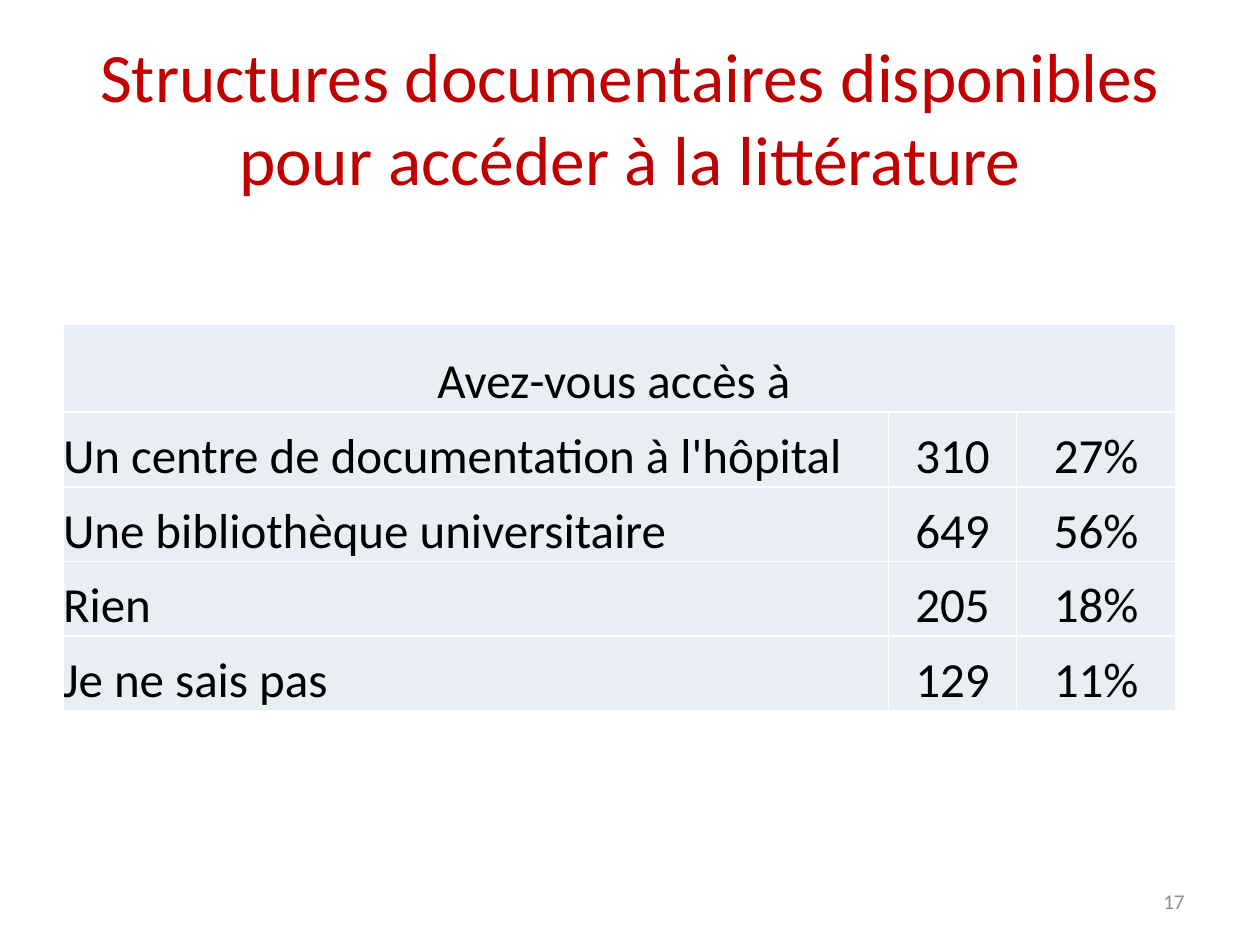
import pptx
import pptx.dml.color
import pptx.enum.text
import pptx.oxml
import pptx.oxml.ns
import pptx.util
from pptx.util import Cm

COLORS = {"title": "C00000", "text": "000000", "cell": "E9EDF4", "border": "FFFFFF", "number": "8C8C8C"}
ALIGN = pptx.enum.text.PP_ALIGN
ANCHOR = pptx.enum.text.MSO_ANCHOR
QUESTION = "Avez-vous accès à "
ANSWERS = [
    ("Un centre de documentation à l'hôpital", "310", "27%"),
    ("Une bibliothèque universitaire", "649", "56%"),
    ("Rien", "205", "18%"),
    ("Je ne sais pas", "129", "11%"),
]


def write(frame, wording, size, color, align):
    """Write one formatted run into the first paragraph of a text frame."""
    paragraph = frame.paragraphs[0]
    paragraph.alignment = align
    run = paragraph.add_run()
    run.text = wording
    run.font.name = "Calibri"
    run.font.size = pptx.util.Pt(size)
    run.font.color.rgb = pptx.dml.color.RGBColor.from_string(COLORS[color])


def place_title(slide, left, top, width, height):
    """Move the title placeholder into its box and fill it."""
    title = slide.shapes.title
    title.left, title.top, title.width, title.height = left, top, width, height
    frame = title.text_frame
    frame.word_wrap = True
    frame.auto_size = pptx.enum.text.MSO_AUTO_SIZE.NONE
    frame.vertical_anchor = ANCHOR.MIDDLE
    wording = "Structures documentaires disponibles pour accéder à la littérature"
    write(frame, wording, 39.6, "title", ALIGN.CENTER)


def add_borders(cell):
    """Draw a thin line on all four sides of a cell."""
    properties = cell._tc.get_or_add_tcPr()
    for position, side in enumerate(("lnL", "lnR", "lnT", "lnB")):
        line = pptx.oxml.parse_xml(
            f'<a:{side} {pptx.oxml.ns.nsdecls("a")} w="12700"><a:solidFill>'
            f'<a:srgbClr val="{COLORS["border"]}"/></a:solidFill></a:{side}>'
        )
        properties.insert(position, line)


def format_cell(cell):
    """Give a cell its fill, borders, zero margins and bottom anchor."""
    cell.fill.solid()
    cell.fill.fore_color.rgb = pptx.dml.color.RGBColor.from_string(COLORS["cell"])
    cell.margin_left = cell.margin_right = cell.margin_top = cell.margin_bottom = 0
    cell.vertical_anchor = ANCHOR.BOTTOM
    add_borders(cell)


def place_answers(slide, left, top, width, height):
    """Build the table of answers, with the question spanning its first row."""
    shares = (0.742, 0.115, 0.143)
    frame = slide.shapes.add_table(len(ANSWERS) + 1, len(shares), left, top, width, height)
    answers = frame.table
    answers.first_row = answers.horz_banding = False
    for column, share in zip(answers.columns, shares):
        column.width = int(width * share)
    question_height = Cm(1.78)
    for row in answers.rows:
        row.height = (height - question_height) // len(ANSWERS)
    answers.rows[0].height = question_height
    for cell in answers.iter_cells():
        format_cell(cell)
    question = answers.cell(0, 0)
    question.merge(answers.cell(0, len(shares) - 1))
    write(question.text_frame, QUESTION, 28, "text", ALIGN.CENTER)
    for row, answer in enumerate(ANSWERS, start=1):
        for column, wording in enumerate(answer):
            align = ALIGN.CENTER if column else ALIGN.LEFT
            write(answers.cell(row, column).text_frame, wording, 28, "text", align)


def place_number(slide, left, top, width, height):
    """Add the slide number at the right of its box."""
    frame = slide.shapes.add_textbox(left, top, width, height).text_frame
    frame.word_wrap = True
    frame.vertical_anchor = ANCHOR.MIDDLE
    write(frame, "17", 12, "number", ALIGN.RIGHT)


def main():
    """Build the slide and save it."""
    deck = pptx.Presentation()
    deck.slide_width, deck.slide_height = Cm(25.4), Cm(19.05)
    slide = deck.slides.add_slide(deck.slide_layouts[5])
    place_title(slide, Cm(1.27), Cm(0.76), Cm(22.86), Cm(3.18))
    place_answers(slide, Cm(1.27), Cm(6.53), Cm(22.43), Cm(7.8))
    place_number(slide, Cm(18.2), Cm(17.66), Cm(5.93), Cm(1.01))
    deck.save("out.pptx")


if __name__ == "__main__":
    main()
